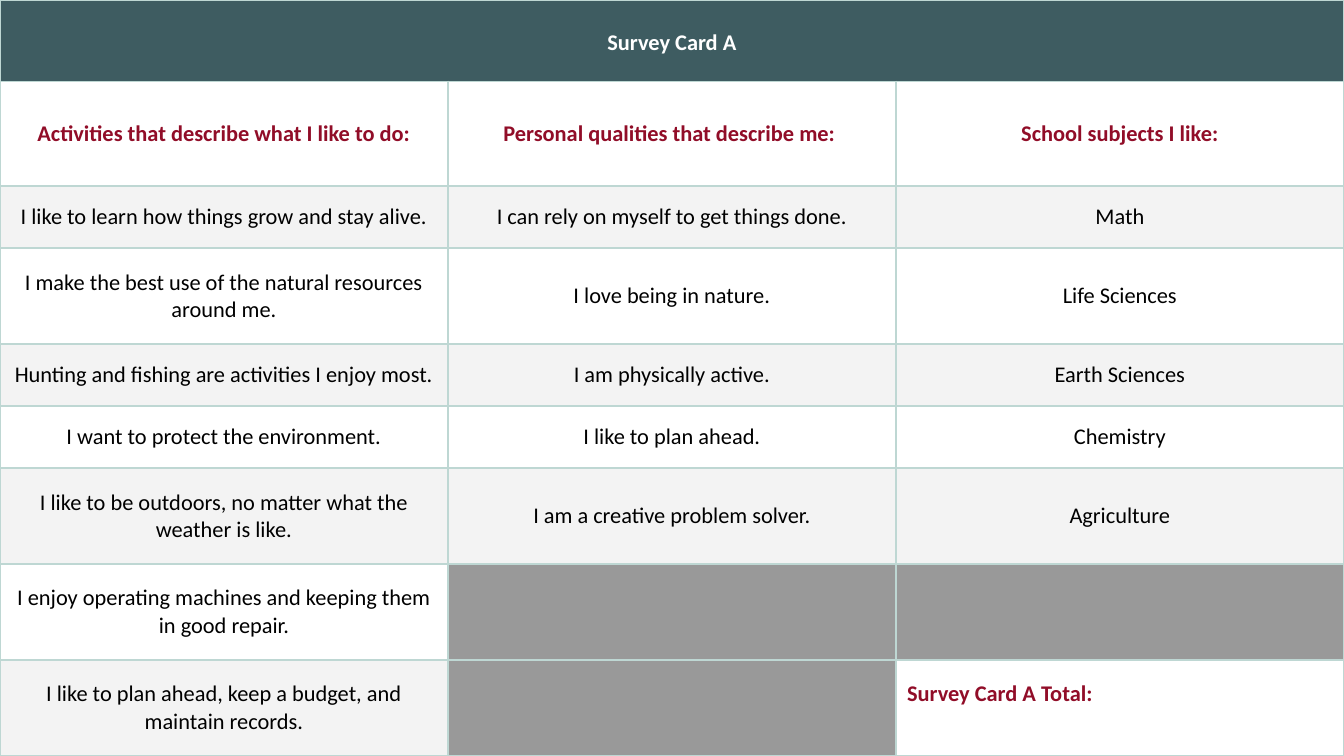
from lxml import etree
from pptx import Presentation
from pptx.dml.color import RGBColor
from pptx.enum.text import MSO_ANCHOR, PP_ALIGN
from pptx.oxml.ns import qn
from pptx.util import Pt

CENTER, LEFT = PP_ALIGN.CENTER, PP_ALIGN.LEFT
MIDDLE = MSO_ANCHOR.MIDDLE
WHITE, BLACK, RED = "FFFFFF", "000000", "910D28"
TEAL, PALE, GRAY, MINT = "3E5C61", "F3F3F3", "999999", "BED7D3"
WIDTH, HEIGHT = 720, 405


def color(value):
    return RGBColor.from_string(value)


def add_borders(cell):
    properties = cell._tc.get_or_add_tcPr()
    for side in ("lnL", "lnR", "lnT", "lnB"):
        line = etree.SubElement(properties, qn("a:" + side), w=str(Pt(1)))
        fill = etree.SubElement(line, qn("a:solidFill"))
        etree.SubElement(fill, qn("a:srgbClr"), val=MINT)


# Card wording, row by row
rows = [
    ["Survey Card A", "", ""],
    ["Activities that describe what I like to do:",
     "Personal qualities that describe me: ", "School subjects I like:"],
    ["I like to learn how things grow and stay alive.",
     "I can rely on myself to get things done.", "Math"],
    ["I make the best use of the natural resources around me.",
     "I love being in nature.", "Life Sciences"],
    ["Hunting and fishing are activities I enjoy most.",
     "I am physically active.", "Earth Sciences"],
    ["I want to protect the environment.", "I like to plan ahead.", "Chemistry"],
    ["I like to be outdoors, no matter what the weather is like.",
     "I am a creative problem solver.", "Agriculture"],
    ["I enjoy operating machines and keeping them in good repair.", "", ""],
    ["I like to plan ahead, keep a budget, and maintain records.",
     "", "Survey Card A Total:"],
]
SHORT, TALL = 33.2, 51.4
row_heights = [43.6, 56.2, SHORT, TALL, SHORT, SHORT, TALL, TALL, TALL]
last_row = len(rows) - 1

# Paragraph formats
title_format = {"alignment": CENTER, "line_spacing": 1.15, "space_after": Pt(6)}
heading_format = {"alignment": CENTER, "space_before": Pt(10)}
total_format = {"alignment": LEFT, "space_before": Pt(10)}
body_format = {"alignment": CENTER}

# Page
deck = Presentation()
deck.slide_width, deck.slide_height = Pt(WIDTH), Pt(HEIGHT)
page = deck.slides.add_slide(deck.slide_layouts[6])

# Table grid
table = page.shapes.add_table(len(rows), 3, 0, 0, Pt(WIDTH), Pt(HEIGHT)).table
table.first_row = table.horz_banding = False
for column in table.columns:
    column.width = Pt(WIDTH / 3)
for row, height in zip(table.rows, row_heights):
    row.height = Pt(height)
table.cell(0, 0).merge(table.cell(0, 2))

# Cells
for row_number, texts in enumerate(rows):
    for column_number, text in enumerate(texts):
        cell = table.cell(row_number, column_number)
        is_total = (row_number, column_number) == (last_row, 2)
        add_borders(cell)

        # Fill: title, unused cells, then alternating bands
        if row_number == 0:
            fill = TEAL
        elif not text:
            fill = GRAY
        elif row_number % 2 or is_total:
            fill = WHITE
        else:
            fill = PALE
        cell.fill.solid()
        cell.fill.fore_color.rgb = color(fill)

        cell.vertical_anchor = MIDDLE
        for side in ("left", "right", "top", "bottom"):
            setattr(cell, "margin_" + side, Pt(6))
        if not text:
            continue

        # Text
        if row_number == 0:
            para_format, ink = title_format, WHITE
        elif row_number == 1:
            para_format, ink = heading_format, RED
        elif is_total:
            para_format, ink = total_format, RED
            cell.margin_bottom = Pt(20.6)  # lifts the label, leaving room below
        else:
            para_format, ink = body_format, BLACK
        para = cell.text_frame.paragraphs[0]
        for name, value in para_format.items():
            setattr(para, name, value)
        span = para.add_run()
        span.text = text
        font_format = {"name": "Calibri", "size": Pt(12), "bold": ink != BLACK}
        for name, value in font_format.items():
            setattr(span.font, name, value)
        span.font.color.rgb = color(ink)

deck.save("out.pptx")
